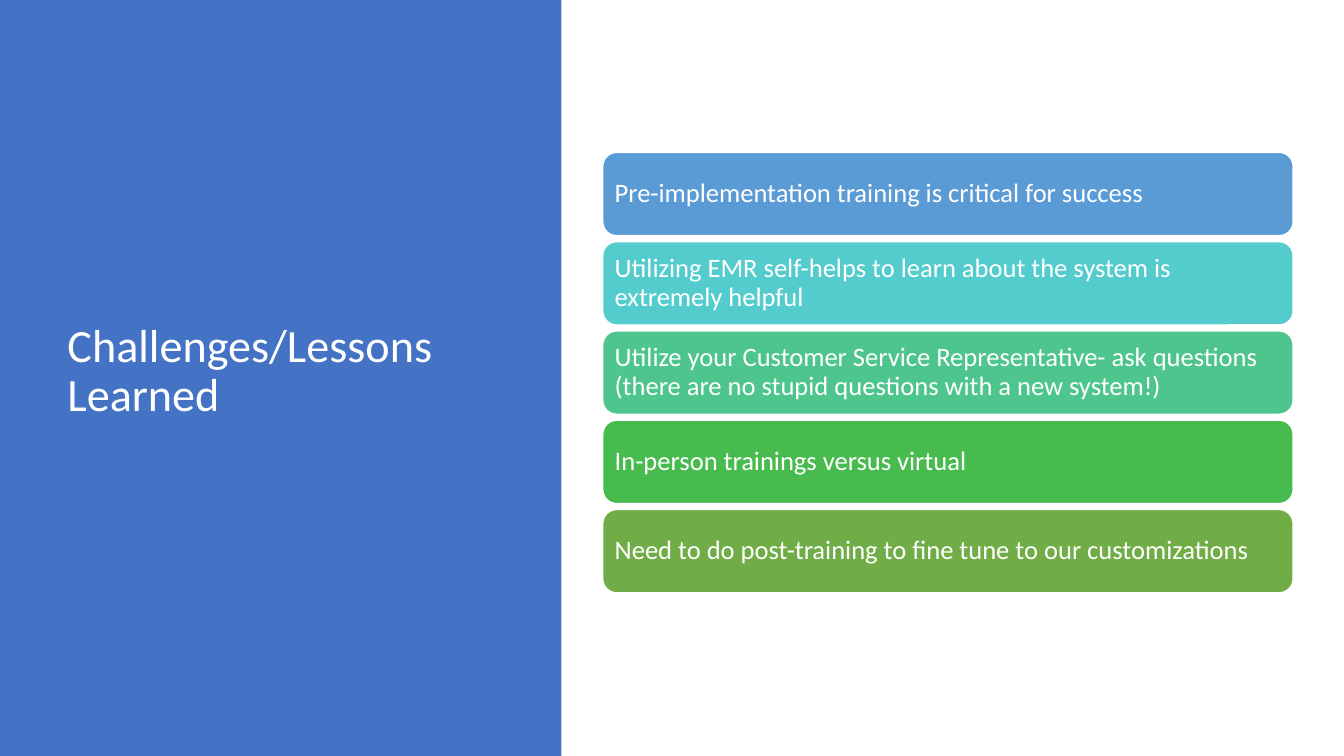
import pptx
import pptx.dml.color
import pptx.enum.shapes
import pptx.enum.text
import pptx.util

Cm = pptx.util.Cm
Pt = pptx.util.Pt
SHAPES = pptx.enum.shapes.MSO_SHAPE

COLOURS = {
    "panel": "4472C4",
    "white": "FFFFFF",
    "blue": "5B9BD5",
    "turquoise": "54CCCD",
    "mint": "4DC58D",
    "green": "48BB4F",
    "olive": "70AD47",
}

LESSONS = [
    ("blue", "Pre-implementation training is critical for success"),
    ("turquoise", "Utilizing EMR self-helps to learn about the system is extremely helpful"),
    ("mint", "Utilize your Customer Service Representative- ask questions "
             "(there are no stupid questions with a new system!)"),
    ("green", "In-person trainings versus virtual"),
    ("olive", "Need to do post-training to fine tune to our customizations"),
]
FIRST_TOP = 3.84
LESSON_PITCH = 2.25


def colour(name):
    return pptx.dml.color.RGBColor.from_string(COLOURS[name])


def write_text(box, text, size):
    frame = box.text_frame
    frame.word_wrap = True
    frame.vertical_anchor = pptx.enum.text.MSO_ANCHOR.MIDDLE
    para = frame.paragraphs[0]
    para.alignment = pptx.enum.text.PP_ALIGN.LEFT
    para.line_spacing = 0.9
    span = para.add_run()
    span.text = text
    span.font.name = "Calibri"
    span.font.size = Pt(size)
    span.font.color.rgb = colour("white")


def add_block(page, kind, left, top, width, height, fill):
    block = page.shapes.add_shape(kind, Cm(left), Cm(top), Cm(width), Cm(height))
    block.shadow.inherit = False
    block.fill.solid()
    block.fill.fore_color.rgb = colour(fill)
    block.line.fill.background()
    return block


def add_title(page, text):
    box = page.shapes.add_textbox(Cm(1.45), Cm(1.73), Cm(10.57), Cm(15.29))
    write_text(box, text, 33)


def add_lesson(page, top, fill, text):
    bar = add_block(page, SHAPES.ROUNDED_RECTANGLE, 15.19, top, 17.4, 2.1, fill)
    bar.line.color.rgb = colour("white")
    bar.line.width = Pt(1)
    frame = bar.text_frame
    frame.margin_left = frame.margin_right = Cm(0.2)
    frame.margin_top = frame.margin_bottom = Cm(0.2)
    write_text(bar, text, 19)


def main():
    deck = pptx.Presentation()
    deck.slide_width = Cm(33.87)
    deck.slide_height = Cm(19.05)
    page = deck.slides.add_slide(deck.slide_layouts[6])

    # Title panel
    add_block(page, SHAPES.RECTANGLE, 0, 0, 14.15, 19.05, "panel")
    add_title(page, "Challenges/Lessons Learned")

    # Stacked lessons
    for row, (fill, text) in enumerate(LESSONS):
        add_lesson(page, FIRST_TOP + row * LESSON_PITCH, fill, text)

    deck.save("out.pptx")


if __name__ == "__main__":
    main()
